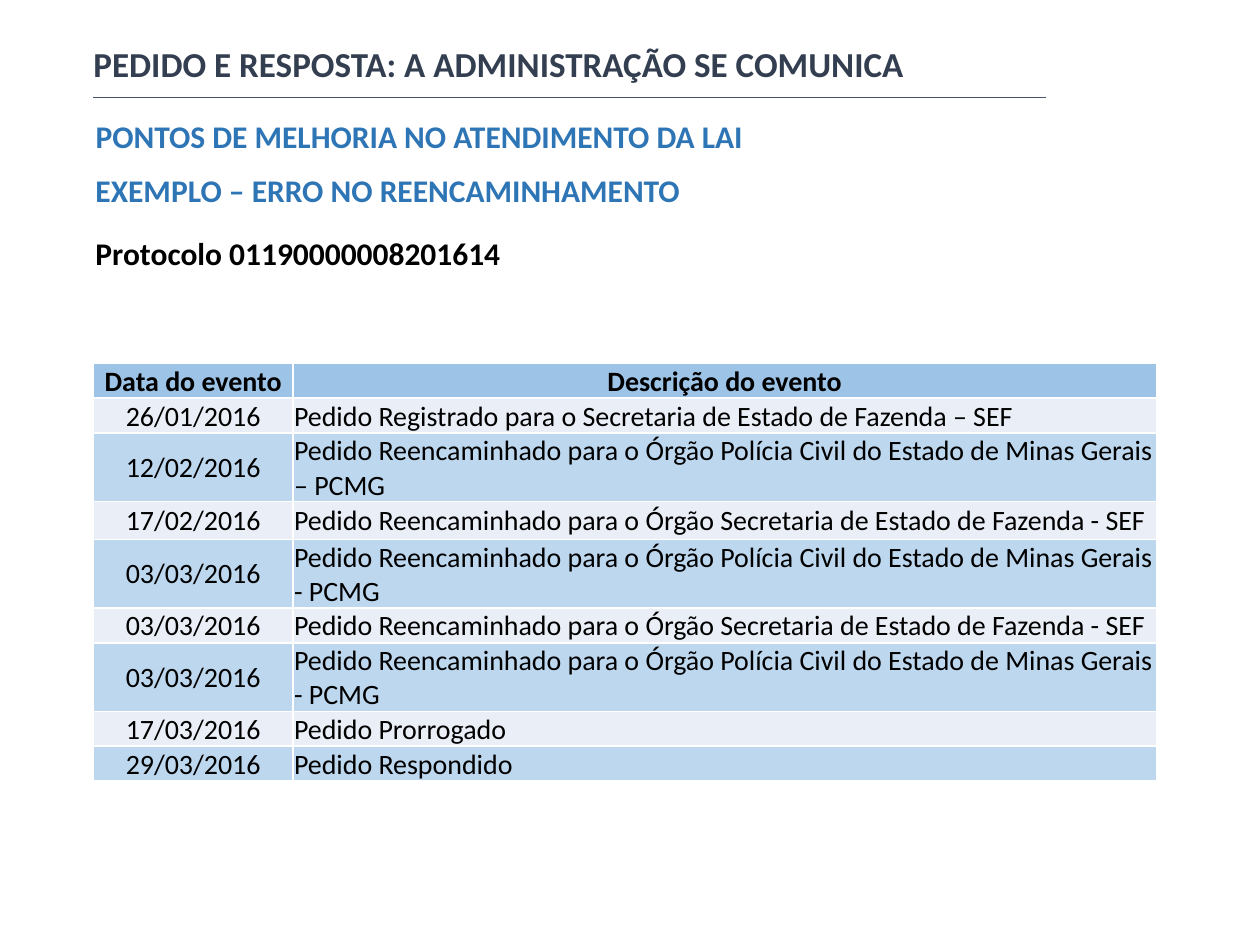
from lxml import etree
from pptx import Presentation
from pptx.dml.color import RGBColor
from pptx.enum import shapes, text
from pptx.oxml import ns
from pptx.util import Pt

COLORS = {
    "title": "333F50", "rule": "44546A", "subtitle": "2E75B6", "text": "000000",
    "header": "9DC3E6", "light": "EAEFF7", "dark": "BDD7EE", "border": "FFFFFF",
}
FONT = "Calibri"
LINE_HEIGHT = 19.7
TWO_LINES = 39.2

FORWARDED = "Pedido Reencaminhado para o Órgão "
TREASURY = FORWARDED + "Secretaria de Estado de Fazenda - SEF"
POLICE = FORWARDED + "Polícia Civil do Estado de Minas Gerais "
EVENTS = [
    ("Data do evento", "Descrição do evento", LINE_HEIGHT),
    ("26/01/2016", "Pedido Registrado para o Secretaria de Estado de Fazenda – SEF", LINE_HEIGHT),
    ("12/02/2016", POLICE + "– PCMG", TWO_LINES),
    ("17/02/2016", TREASURY, 21.7),
    ("03/03/2016", POLICE + "- PCMG", TWO_LINES),
    ("03/03/2016", TREASURY, LINE_HEIGHT),
    ("03/03/2016", POLICE + "- PCMG", TWO_LINES),
    ("17/03/2016", "Pedido Prorrogado", LINE_HEIGHT),
    ("29/03/2016", "Pedido Respondido", LINE_HEIGHT),
]


def rgb(name):
    return RGBColor.from_string(COLORS[name])


def write(frame, words, size=18, color="text", bold=True, align=text.PP_ALIGN.LEFT):
    paragraph = frame.paragraphs[0]
    paragraph.alignment = align
    run = paragraph.add_run()
    run.text = words
    run.font.name = FONT
    run.font.size = Pt(size)
    run.font.bold = bold
    run.font.color.rgb = rgb(color)


def add_heading(slide, words, left, top, width, height, **style):
    box = slide.shapes.add_textbox(Pt(left), Pt(top), Pt(width), Pt(height))
    box.text_frame.word_wrap = False
    box.text_frame.auto_size = text.MSO_AUTO_SIZE.SHAPE_TO_FIT_TEXT
    write(box.text_frame, words, **style)


def add_rule(slide, left, top, width):
    line = slide.shapes.add_connector(
        shapes.MSO_CONNECTOR.STRAIGHT, Pt(left), Pt(top), Pt(left + width), Pt(top))
    line.line.color.rgb = rgb("rule")
    line.line.width = Pt(0.5)
    etree.SubElement(line._element.spPr, ns.qn("a:effectLst"))


def add_headings(slide, left, top):
    add_heading(slide, "PEDIDO E RESPOSTA: A ADMINISTRAÇÃO SE COMUNICA",
                left, top, 481.7, 31.5, size=20, color="title")
    add_rule(slide, left + 7, top + 34.5, 544.5)
    subtitles = [
        ("PONTOS DE MELHORIA NO ATENDIMENTO DA LAI", 42.5, 401.8, "subtitle"),
        ("EXEMPLO – ERRO NO REENCAMINHAMENTO", 73, 352, "subtitle"),
        ("Protocolo 01190000008201614", 109, 247, "text"),
    ]
    for words, offset, width, color in subtitles:
        add_heading(slide, words, left + 1.2, top + offset, width, 29, color=color)


def add_borders(cell):
    properties = cell._tc.get_or_add_tcPr()
    for index, side in enumerate(("lnL", "lnR", "lnT", "lnB")):
        line = etree.Element(ns.qn("a:" + side), w=str(Pt(1)))
        fill = etree.SubElement(line, ns.qn("a:solidFill"))
        etree.SubElement(fill, ns.qn("a:srgbClr"), val=COLORS["border"])
        properties.insert(index, line)


def add_event_table(slide, left, top, column_widths):
    height = sum(event[2] for event in EVENTS)
    table = slide.shapes.add_table(
        len(EVENTS), len(column_widths), Pt(left), Pt(top),
        Pt(sum(column_widths)), Pt(height)).table
    for column, width in zip(table.columns, column_widths):
        column.width = Pt(width)
    for row_index, (*values, row_height) in enumerate(EVENTS):
        table.rows[row_index].height = Pt(row_height)
        is_header = row_index == 0
        fill = "header" if is_header else ("dark", "light")[row_index % 2]
        for column_index, value in enumerate(values):
            cell = table.cell(row_index, column_index)
            cell.margin_left = cell.margin_right = cell.margin_top = Pt(0.7)
            cell.margin_bottom = Pt(0)
            cell.vertical_anchor = text.MSO_ANCHOR.MIDDLE
            cell.fill.solid()
            cell.fill.fore_color.rgb = rgb(fill)
            add_borders(cell)
            centered = is_header or column_index == 0
            write(cell.text_frame, value, size=16, bold=is_header,
                  align=text.PP_ALIGN.CENTER if centered else text.PP_ALIGN.LEFT)


def main():
    presentation = Presentation()
    presentation.slide_width = Pt(720)
    presentation.slide_height = Pt(540)
    slide = presentation.slides.add_slide(presentation.slide_layouts[6])
    add_headings(slide, left=46.3, top=21)
    add_event_table(slide, left=53.4, top=207.6, column_widths=(114, 493.4))
    presentation.save("out.pptx")


if __name__ == "__main__":
    main()
